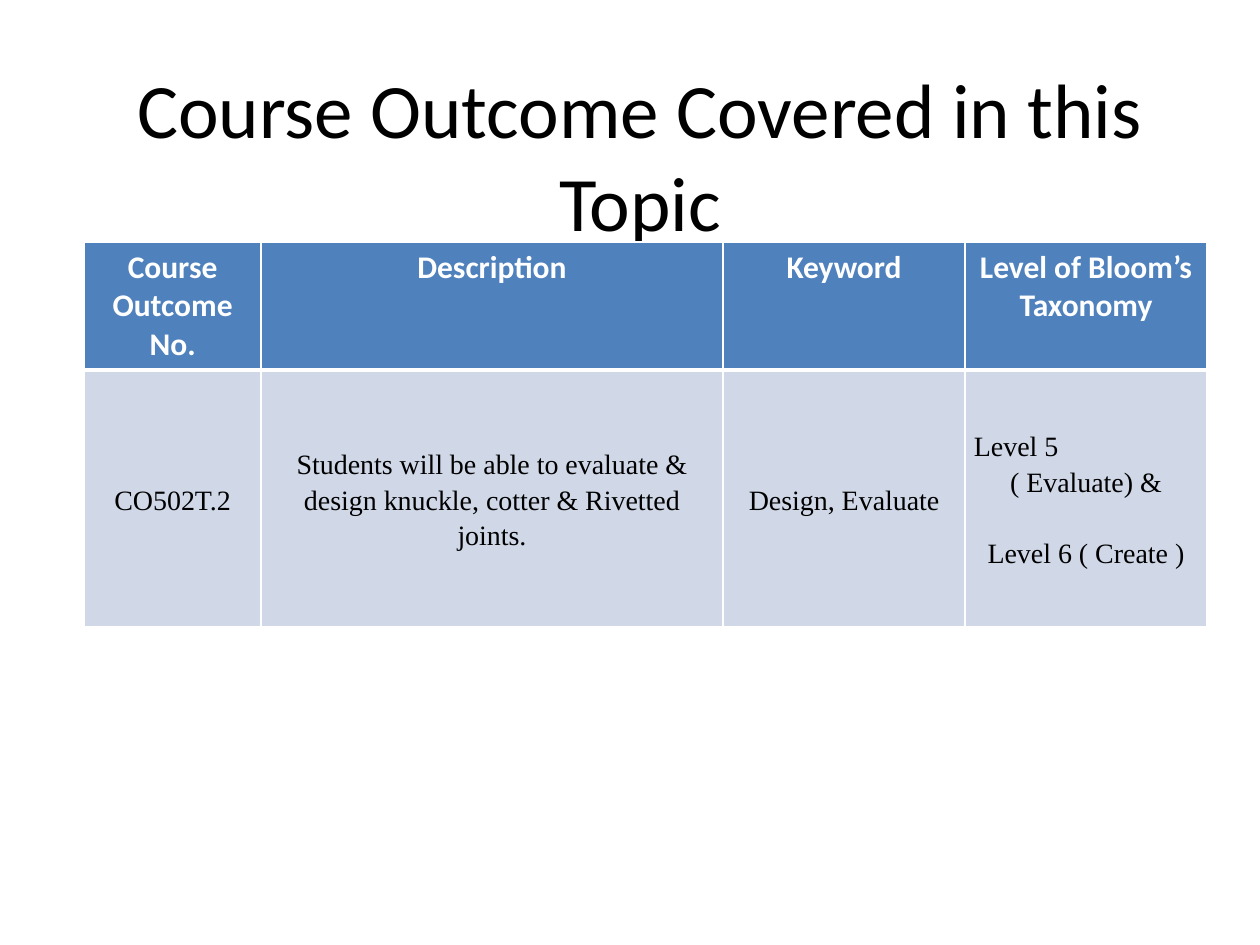
from lxml import etree
from pptx import Presentation
from pptx.dml.color import RGBColor
from pptx.enum.text import MSO_ANCHOR, PP_ALIGN
from pptx.oxml.ns import qn
from pptx.util import Inches, Pt

CENTER, LEFT = PP_ALIGN.CENTER, PP_ALIGN.LEFT
MIDDLE, TOP = MSO_ANCHOR.MIDDLE, MSO_ANCHOR.TOP
COLORS = {"text": "000000", "white": "FFFFFF", "header": "4F81BD", "body": "D0D8E8"}


def add_text(paragraph, text, size, font, color, bold=False):
    run = paragraph.add_run()
    run.text = text
    run.font.size = Pt(size)
    run.font.name = font
    run.font.bold = bold
    run.font.color.rgb = RGBColor.from_string(COLORS[color])


def style_cell(cell, fill, widths):
    """Fill a cell and give it white borders; widths maps each side to points."""
    properties = cell._tc.get_or_add_tcPr()
    for side, width in widths.items():
        line = etree.SubElement(properties, qn(f"a:ln{side}"), w=str(Pt(width)))
        solid = etree.SubElement(line, qn("a:solidFill"))
        etree.SubElement(solid, qn("a:srgbClr"), val=COLORS["white"])
    cell.fill.solid()
    cell.fill.fore_color.rgb = RGBColor.from_string(COLORS[fill])


prs = Presentation()
prs.slide_width, prs.slide_height = Inches(10), Inches(7.5)
slide = prs.slides.add_slide(prs.slide_layouts[5])

title = slide.shapes.title
title.left, title.top = Inches(0.83), Inches(0.42)
title.width, title.height = Inches(8.5), Inches(1.61)
title.text_frame.vertical_anchor = MIDDLE
heading = title.text_frame.paragraphs[0]
heading.alignment = CENTER
add_text(heading, "Course Outcome Covered in this Topic", 44, "Calibri", "text")

headers = ["Course Outcome No.", "Description", "Keyword", "Level of Bloom’s Taxonomy"]
# Each line of an outcome cell: text, alignment, space before in points
outcome = [
    [("CO502T.2", CENTER, 0)],
    [("Students will be able to evaluate & design knuckle, cotter & Rivetted joints.", CENTER, 0)],
    [("Design, Evaluate", CENTER, 0)],
    [("Level 5", LEFT, 0), ("( Evaluate) &", CENTER, 0), ("Level 6 ( Create )", CENTER, 20)],
]

table = slide.shapes.add_table(
    2, 4, Inches(0.67), Inches(1.92), Inches(8.91), Inches(3.04)).table
for column, width in zip(table.columns, [1.4, 3.67, 1.92, 1.92]):
    column.width = Inches(width)
for row, height in zip(table.rows, [1, 2.04]):
    row.height = Inches(height)

for col, (header, lines) in enumerate(zip(headers, outcome)):
    header_cell = table.cell(0, col)
    style_cell(header_cell, "header", {"L": 1, "R": 1, "T": 1, "B": 3})
    header_cell.vertical_anchor = TOP
    label = header_cell.text_frame.paragraphs[0]
    label.alignment = CENTER
    add_text(label, header, 18, "Calibri", "white", bold=True)

    body_cell = table.cell(1, col)
    style_cell(body_cell, "body", {"L": 1, "R": 1, "T": 3, "B": 1})
    body_cell.vertical_anchor = MIDDLE
    body_cell.margin_left = body_cell.margin_right = Inches(0.07)
    body_cell.margin_top = body_cell.margin_bottom = 0
    frame = body_cell.text_frame
    for index, (text, alignment, space_before) in enumerate(lines):
        paragraph = frame.add_paragraph() if index else frame.paragraphs[0]
        paragraph.alignment = alignment
        paragraph.line_spacing = 1.15
        if space_before:
            paragraph.space_before = Pt(space_before)
        add_text(paragraph, text, 16, "Times New Roman", "text")

prs.save("out.pptx")
